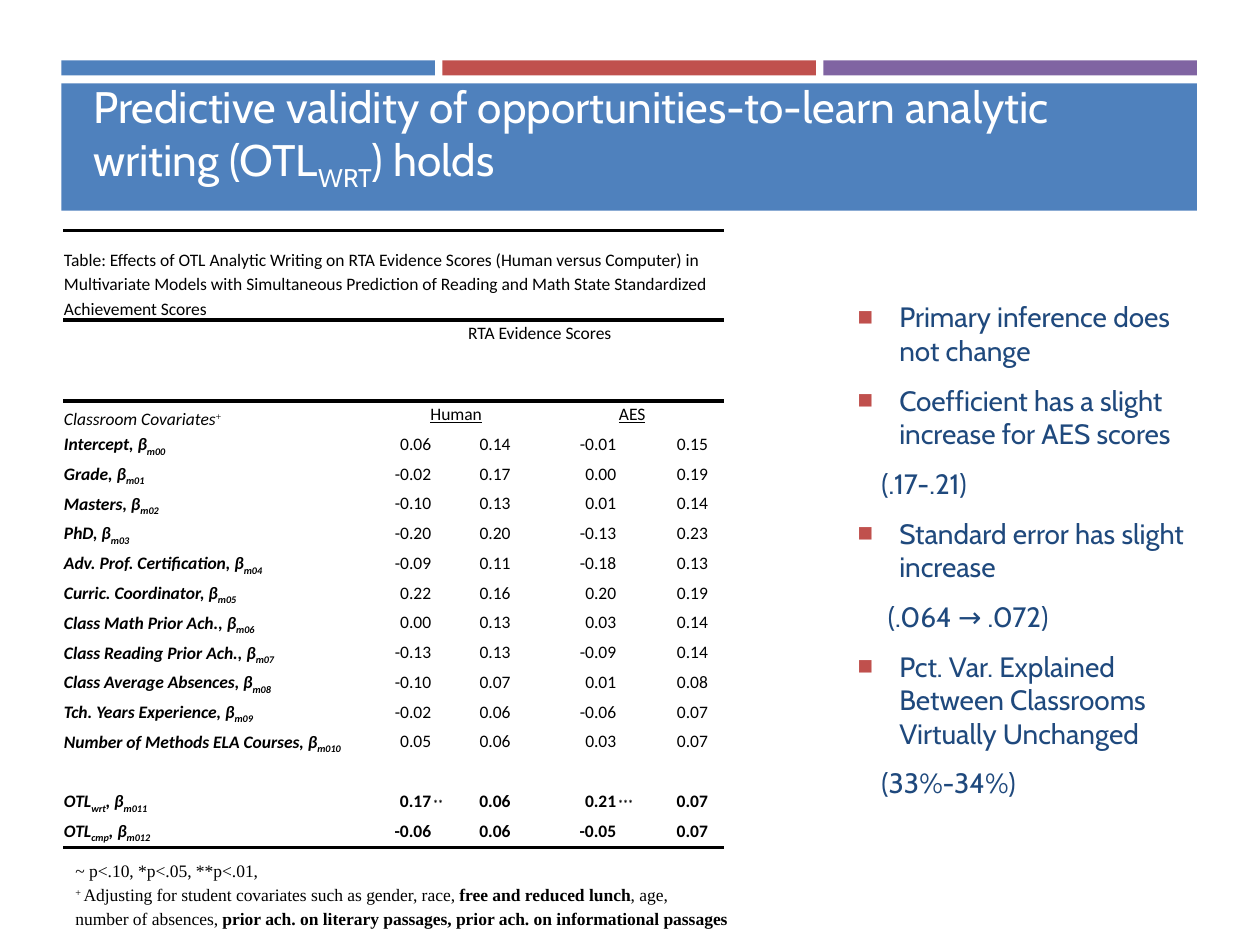
from lxml import etree
from pptx import Presentation
from pptx.dml.color import RGBColor
from pptx.enum.shapes import MSO_SHAPE
from pptx.enum.text import MSO_ANCHOR, PP_ALIGN
from pptx.oxml.ns import qn
from pptx.util import Cm, Pt

RECT = MSO_SHAPE.RECTANGLE
TOP, BOTTOM = MSO_ANCHOR.TOP, MSO_ANCHOR.BOTTOM
LEFT, CENTER, RIGHT = PP_ALIGN.LEFT, PP_ALIGN.CENTER, PP_ALIGN.RIGHT
COLORS = {"blue": "4F81BD", "red": "C0504D", "purple": "8064A2",
          "navy": "1F497D", "black": "000000", "white": "FFFFFF"}
NO_STYLE = "{2D5ABB26-0587-4C30-8999-92F81FD0307C}"
BASELINES = {"_": "-25000", "^": "30000"}


def write(paragraph, runs, size, font, color):
    """Add (text, marks) runs; marks: b bold, i italic, u underline, _ sub, ^ super."""
    for text, marks in runs:
        run = paragraph.add_run()
        run.text = text
        run.font.size, run.font.name = Pt(size), font
        run.font.color.rgb = RGBColor.from_string(COLORS[color])
        run.font.bold, run.font.italic = "b" in marks, "i" in marks
        run.font.underline = "u" in marks
        for mark, baseline in BASELINES.items():
            if mark in marks:
                run.font._element.set("baseline", baseline)


def fill_cell(row, col, runs, align=LEFT, anchor=TOP):
    cell = table.cell(row, col)
    cell.vertical_anchor = anchor
    paragraph = cell.text_frame.paragraphs[0]
    paragraph.alignment, paragraph.line_spacing = align, 1.15
    write(paragraph, runs, 10, "Calibri", "black")
    return paragraph


prs = Presentation()
prs.slide_width, prs.slide_height = Cm(25.4), Cm(19.05)
slide = prs.slides.add_slide(prs.slide_layouts[6])

# Three stripes above the title banner
bands = [(1.24 + 7.68 * i, 1.22, 7.53, 0.3, color)
         for i, color in enumerate(["blue", "red", "purple"])]
bands.append((1.24, 1.68, 22.89, 2.57, "blue"))
for left, top, width, height, color in bands:
    band = slide.shapes.add_shape(RECT, Cm(left), Cm(top), Cm(width), Cm(height))
    band.shadow.inherit = False
    band.fill.solid()
    band.fill.fore_color.rgb = RGBColor.from_string(COLORS[color])
    band.line.fill.background()

# Title
title = slide.shapes.add_textbox(Cm(1.63), Cm(1.9), Cm(22.2), Cm(2.11)).text_frame
title.word_wrap = True
title.vertical_anchor = BOTTOM
write(title.paragraphs[0],
      [("Predictive validity of opportunities-to-learn analytic writing (OTL", ""),
       ("WRT", "_"), (") holds", "")], 25.2, "Cabin", "white")

# Findings: bulleted statements, each detail indented below (text, left indent)
findings = [
    ("Primary inference does not change", None),
    ("Coefficient has a slight increase for AES scores", None),
    ("(.17-.21)", 0.48),
    ("Standard error has slight increase", None),
    ("(.064 → .072)", 0.61),
    ("Pct. Var. Explained Between Classrooms Virtually Unchanged", None),
    ("(33%-34%)", 0.48),
]
findings_frame = slide.shapes.add_textbox(
    Cm(17.04), Cm(5.92), Cm(7.32), Cm(10.8)).text_frame
findings_frame.word_wrap = True
for i, (text, indent) in enumerate(findings):
    finding = findings_frame.add_paragraph() if i else findings_frame.paragraphs[0]
    finding.space_before, finding.space_after = Pt(3.2), Pt(6)
    write(finding, [(text, "")], 16, "Cabin", "navy")
    props = finding._p.get_or_add_pPr()
    if indent:
        props.set("marL", str(Cm(indent)))
        continue
    props.set("marL", str(Cm(0.84)))
    props.set("indent", str(-Cm(0.84)))
    bullet_color = etree.SubElement(props, qn("a:buClr"))
    etree.SubElement(bullet_color, qn("a:srgbClr"), val=COLORS["red"])
    etree.SubElement(props, qn("a:buSzPct"), val="92000")
    etree.SubElement(props, qn("a:buFont"), typeface="Arial")
    etree.SubElement(props, qn("a:buChar"), char="■")

# Covariates: name, subscript of the name, index of beta, values, marks
covariates = [
    ("Intercept", "", "00", ["0.06", "0.14", "-0.01", "0.15"]),
    ("Grade", "", "01", ["-0.02", "0.17", "0.00", "0.19"]),
    ("Masters", "", "02", ["-0.10", "0.13", "0.01", "0.14"]),
    ("PhD", "", "03", ["-0.20", "0.20", "-0.13", "0.23"]),
    ("Adv. Prof. Certification", "", "04", ["-0.09", "0.11", "-0.18", "0.13"]),
    ("Curric. Coordinator", "", "05", ["0.22", "0.16", "0.20", "0.19"]),
    ("Class Math Prior Ach.", "", "06", ["0.00", "0.13", "0.03", "0.14"]),
    ("Class Reading Prior Ach.", "", "07", ["-0.13", "0.13", "-0.09", "0.14"]),
    ("Class Average Absences", "", "08", ["-0.10", "0.07", "0.01", "0.08"]),
    ("Tch. Years Experience", "", "09", ["-0.02", "0.06", "-0.06", "0.07"]),
    ("Number of Methods ELA Courses", "", "010", ["0.05", "0.06", "0.03", "0.07"]),
    ("OTL", "wrt", "011", ["0.17", "0.06", "0.21", "0.07"]),
    ("OTL", "cmp", "012", ["-0.06", "0.06", "-0.05", "0.07"]),
]
col_widths = [6.2, 1.24, 0.53, 1.07, 0.89, 1.24, 0.71, 1.14, 0.3]
row_heights = [1.8, 1.63] + [0.6] * 11 + [1.2] + [0.6] * 2
last_row = len(row_heights) - 1

# Table grid without a style
table_frame = slide.shapes.add_table(
    len(row_heights), len(col_widths), Cm(1.27), Cm(4.65),
    Cm(sum(col_widths)), Cm(sum(row_heights)))
table = table_frame.table
table.first_row = table.horz_banding = False
table._tbl.tblPr.find(qn("a:tableStyleId")).text = NO_STYLE
for column, width in zip(table.columns, col_widths):
    column.width = Cm(width)
for table_row, height in zip(table.rows, row_heights):
    table_row.height = Cm(height)

# Cell margins, fills and the three heavy rules
rules = {0: ["a:lnT", "a:lnB"], 1: ["a:lnT"], last_row: ["a:lnB"]}
for row in range(len(row_heights)):
    for col in range(len(col_widths)):
        cell = table.cell(row, col)
        cell.margin_left = cell.margin_right = Cm(0.02)
        cell.margin_top = cell.margin_bottom = 0
        for side in rules.get(row, []):
            rule = etree.SubElement(cell._tc.get_or_add_tcPr(), qn(side),
                                    w=str(Pt(2.25)))
            rule_fill = etree.SubElement(rule, qn("a:solidFill"))
            etree.SubElement(rule_fill, qn("a:srgbClr"), val=COLORS["black"])
        cell.fill.background()
        cell.text_frame.paragraphs[0]._p.get_or_add_endParaRPr().set("sz", "1000")

# Table headings
for row, first, last in [(0, 0, 8), (1, 1, 7), (2, 1, 3), (2, 5, 7)]:
    table.cell(row, first).merge(table.cell(row, last))
fill_cell(0, 0, [("Table: Effects of OTL Analytic Writing on RTA Evidence Scores "
                  "(Human versus Computer) in Multivariate Models with Simultaneous "
                  "Prediction of Reading and Math State Standardized Achievement "
                  "Scores", "")], anchor=BOTTOM)
fill_cell(1, 1, [("RTA Evidence Scores", "")], CENTER)
fill_cell(2, 0, [("Classroom Covariates", "i"), ("+", "^")],
          anchor=BOTTOM).runs[1].font.name = "Times New Roman"
human = fill_cell(2, 1, [("Human", "u")], CENTER)
human._p.get_or_add_pPr().set("marL", str(Cm(0.61)))
fill_cell(2, 5, [("AES", "u")], CENTER)

# Covariate rows
for row, (name, name_sub, index, values) in enumerate(covariates, start=3):
    label = [(name, "bi"), (name_sub, "bi_"), (", β", "bi"), ("m" + index, "bi_")]
    fill_cell(row, 0, [part for part in label if part[0]])
    for col, value in zip([1, 3, 5, 7], values):
        fill_cell(row, col, [(value, "b" if name_sub else "")], RIGHT)
for col, stars in [(2, "**"), (6, "***")]:
    fill_cell(last_row - 1, col, [(stars, "b^")], anchor=BOTTOM)

# Footnotes
footnotes = [
    [("~ p<.10, *p<.05, **p<.01,", "")],
    [("+ ", "^"), ("Adjusting for student covariates such as gender, race, ", ""),
     ("free and reduced lunch", "b"), (", age,", "")],
    [("number of absences, ", ""),
     ("prior ach. on literary passages, prior ach. on informational passages", "b")],
]
notes_frame = slide.shapes.add_textbox(
    Cm(1.27), Cm(17.15), Cm(13.77), Cm(1.73)).text_frame
notes_frame.word_wrap = True
for i, runs in enumerate(footnotes):
    footnote = notes_frame.add_paragraph() if i else notes_frame.paragraphs[0]
    footnote.line_spacing = 1.15
    write(footnote, runs, 10, "Times New Roman", "black")

prs.save("out.pptx")
